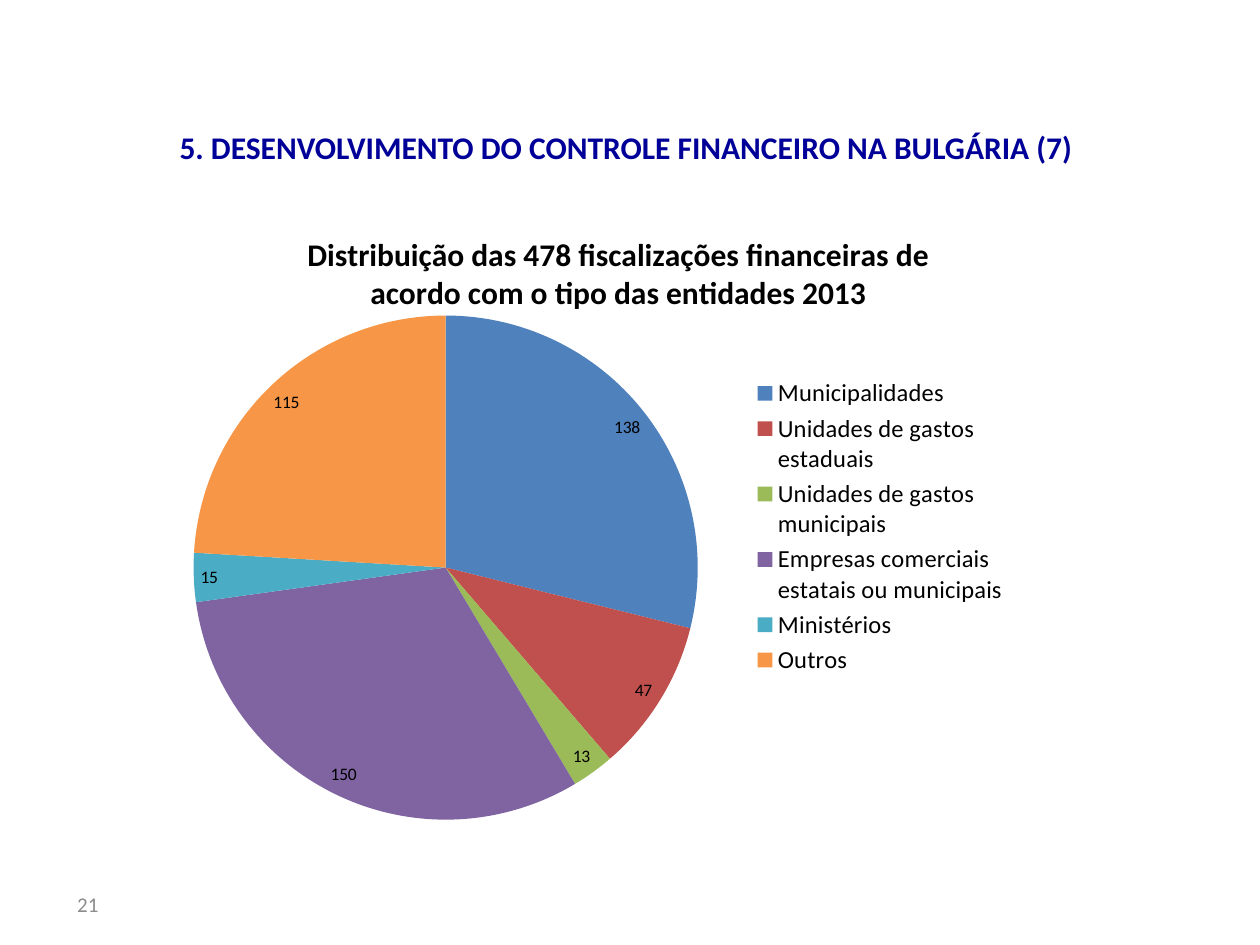
from typing import NamedTuple

from lxml import etree
from pptx import Presentation
from pptx.chart.data import CategoryChartData
from pptx.dml.color import RGBColor
from pptx.enum import chart as charts, text
from pptx.oxml import ns
from pptx.util import Pt

FONT = "Calibri"


class Box(NamedTuple):
    left: float
    top: float
    width: float
    height: float

    def lengths(self) -> list[Pt]:
        return [Pt(value) for value in self]


class Entity(NamedTuple):
    name: str
    audits: int
    color: str


ENTITIES = [
    Entity("Municipalidades", 138, "4F81BD"),
    Entity("Unidades de gastos estaduais", 47, "C0504D"),
    Entity("Unidades de gastos municipais", 13, "9BBB59"),
    Entity("Empresas comerciais estatais ou municipais ", 150, "8064A2"),
    Entity("Ministérios", 15, "4BACC6"),
    Entity("Outros", 115, "F79646"),
]


def rgb(color: str) -> RGBColor:
    return RGBColor.from_string(color)


def format_font(font, size: float, color: str = "000000", bold: bool = False) -> None:
    font.name = FONT
    font.size = Pt(size)
    font.bold = bold
    font.color.rgb = rgb(color)


def add_text(slide, content: str, box: Box, *, size: float, color: str,
             bold: bool = False, align=text.PP_ALIGN.LEFT,
             anchor=text.MSO_ANCHOR.TOP) -> None:
    frame = slide.shapes.add_textbox(*box.lengths()).text_frame
    frame.word_wrap = True
    frame.vertical_anchor = anchor
    paragraph = frame.paragraphs[0]
    paragraph.alignment = align
    run = paragraph.add_run()
    run.text = content
    format_font(run.font, size, color, bold)


def set_layout(element, position: int, **settings) -> None:
    """Place a chart part by fractions of the chart; position is the layout's child index."""
    layout = element.find(ns.qn("c:layout"))
    if layout is None:
        layout = etree.Element(ns.qn("c:layout"))
        element.insert(position, layout)
    manual = etree.SubElement(layout, ns.qn("c:manualLayout"))
    for name, value in settings.items():
        etree.SubElement(manual, ns.qn(f"c:{name}")).set("val", str(value))


def add_pie(slide, title: str, entities: list[Entity], box: Box) -> None:
    data = CategoryChartData()
    data.categories = [entity.name for entity in entities]
    data.add_series("Series 1", [entity.audits for entity in entities])
    chart = slide.shapes.add_chart(
        charts.XL_CHART_TYPE.PIE, *box.lengths(), data).chart
    format_font(chart.font, 10)

    chart.has_title = True
    chart.chart_title.include_in_layout = False
    run = chart.chart_title.text_frame.paragraphs[0].add_run()
    run.text = title
    format_font(run.font, 18, bold=True)
    set_layout(chart.chart_title._element, 1, xMode="edge", yMode="edge", x=0.17, y=0.02)

    chart.has_legend = True
    chart.legend.position = charts.XL_LEGEND_POSITION.RIGHT
    chart.legend.include_in_layout = False
    format_font(chart.legend.font, 14)

    plot = chart.plots[0]
    plot.vary_by_categories = True
    for index, entity in enumerate(entities):
        fill = plot.series[0].points[index].format.fill
        fill.solid()
        fill.fore_color.rgb = rgb(entity.color)
    labels = plot.series[0].data_labels
    labels.show_value = True
    labels.show_percentage = False
    labels.position = charts.XL_LABEL_POSITION.BEST_FIT
    format_font(labels.font, 10)
    set_layout(plot._element.getparent(), 0, layoutTarget="inner", xMode="edge",
               yMode="edge", x=0.046, y=0.162, w=0.578, h=0.807)


def main() -> None:
    presentation = Presentation()
    presentation.slide_width, presentation.slide_height = Pt(720), Pt(540)
    slide = presentation.slides.add_slide(presentation.slide_layouts[6])
    add_text(slide, "21", Box(37, 502, 168, 29), size=12, color="8C8C8C",
             anchor=text.MSO_ANCHOR.MIDDLE)
    add_text(slide, "5. DESENVOLVIMENTO DO CONTROLE FINANCEIRO NA BULGÁRIA (7)",
             Box(71.5, 69.5, 572.5, 29), size=18, color="000099", bold=True,
             align=text.PP_ALIGN.CENTER)
    add_pie(slide,
            "Distribuição das 478 fiscalizações financeiras de acordo com o tipo "
            "das entidades 2013",
            ENTITIES, Box(87.5, 122.5, 499, 357))
    presentation.save("out.pptx")


if __name__ == "__main__":
    main()
